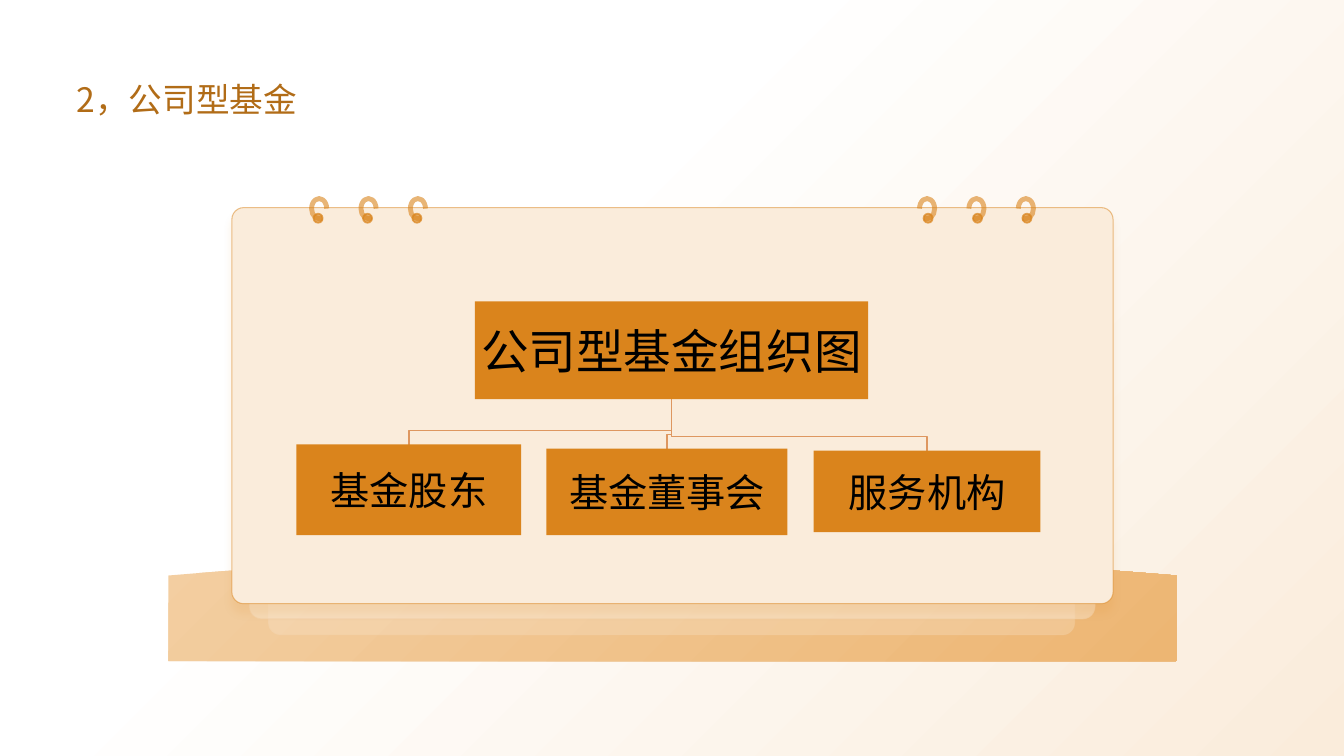
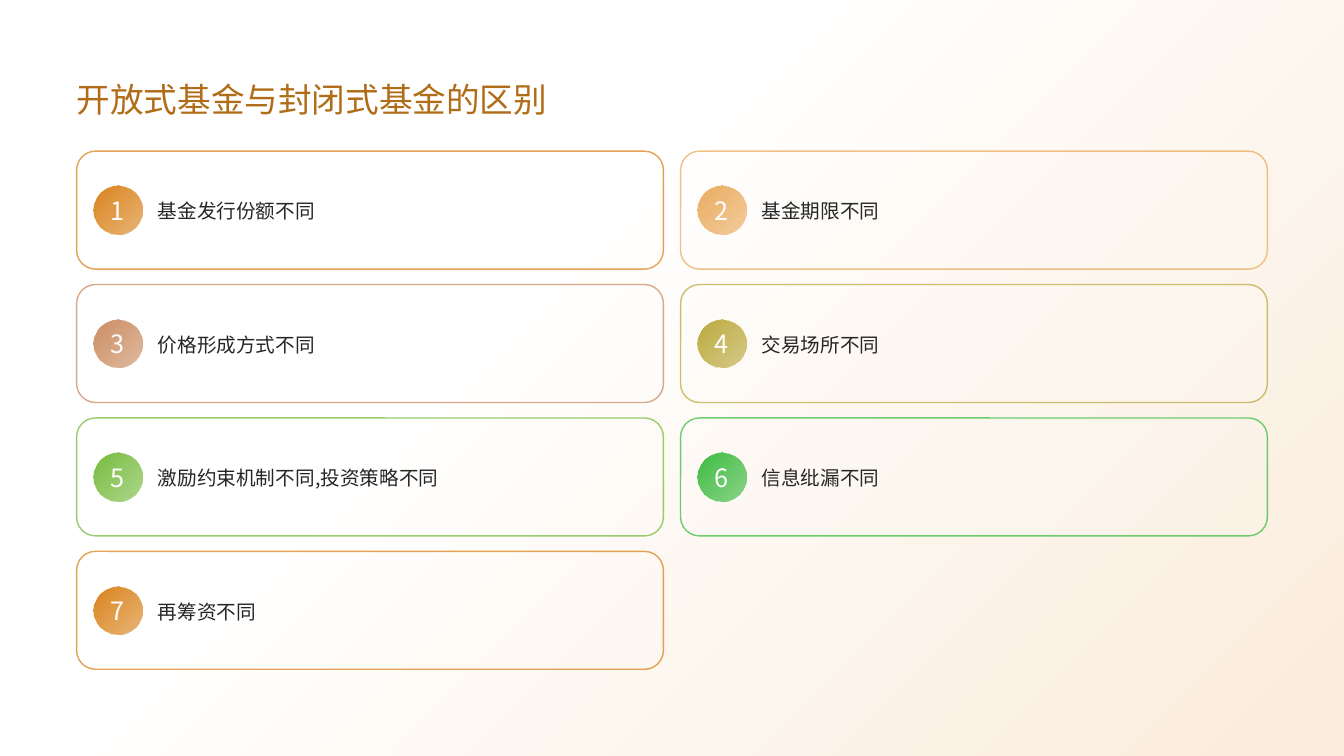
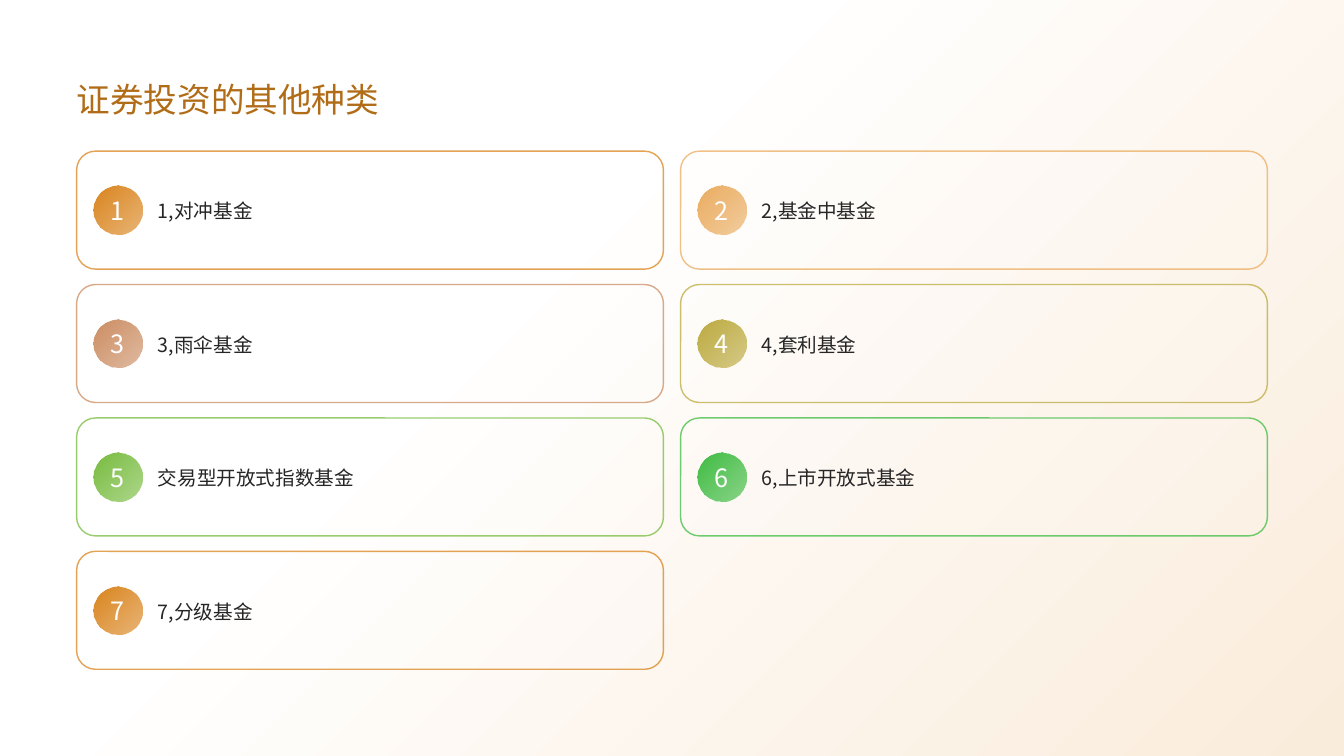
from lxml import etree
from pptx import Presentation
from pptx.dml.color import RGBColor
from pptx.enum.shapes import MSO_SHAPE
from pptx.enum.text import MSO_ANCHOR, PP_ALIGN
from pptx.oxml.ns import qn
from pptx.util import Inches, Pt

RECTANGLE = MSO_SHAPE.RECTANGLE
ROUNDED = MSO_SHAPE.ROUNDED_RECTANGLE
OVAL = MSO_SHAPE.OVAL
ARC = MSO_SHAPE.ARC
MIDDLE = MSO_ANCHOR.MIDDLE
BOTTOM = MSO_ANCHOR.BOTTOM
LEFT = PP_ALIGN.LEFT
CENTER = PP_ALIGN.CENTER

WHITE = RGBColor(0xFF, 0xFF, 0xFF)
BLACK = RGBColor(0x00, 0x00, 0x00)
INK = RGBColor(0x26, 0x26, 0x26)
BROWN = RGBColor(0xB1, 0x6C, 0x17)
ORANGE = RGBColor(0xDA, 0x84, 0x1C)
AMBER = RGBColor(0xEB, 0xAC, 0x5F)
CLAY = RGBColor(0xCC, 0x8D, 0x62)
OLIVE = RGBColor(0xBC, 0xAA, 0x3E)
LIME = RGBColor(0x77, 0xBC, 0x3E)
GREEN = RGBColor(0x3E, 0xBC, 0x41)
CREAM = RGBColor(0xFA, 0xEC, 0xDB)
PAGE = RGBColor(0xF9, 0xE7, 0xD0)
SAND = RGBColor(0xF3, 0xCE, 0xA1)
HONEY = RGBColor(0xED, 0xB6, 0x73)
BRANCH = RGBColor(0xDE, 0x97, 0x60)

FONT = "Noto Sans CJK SC"
SLIDE_WIDTH, SLIDE_HEIGHT = 13.33, 7.5
TITLE_BOX = (0.76, 0.39, 11.81, 0.79)
CARD_AREA = (0.76, 1.5, 11.81, 5.14)
CARD_WIDTH, CARD_HEIGHT = 5.82, 1.17
BADGE_SIZE = 0.48
CARD_COLORS = (ORANGE, AMBER, CLAY, OLIVE, LIME, GREEN)
BOARD_BOX = (2.3, 2.06, 8.74, 3.93)
STAND_BOX = (1.67, 5.5, 10, 1.06)

DIFFERENCES = ("基金发行份额不同", "基金期限不同", "价格形成方式不同", "交易场所不同",
               "激励约束机制不同,投资策略不同", "信息纰漏不同", "再筹资不同")
OTHER_KINDS = ("1,对冲基金", "2,基金中基金", "3,雨伞基金", "4,套利基金",
               "交易型开放式指数基金", "6,上市开放式基金", "7,分级基金")


def set_alpha(color_parent, percent):
    color = next(color_parent.iter(qn("a:srgbClr")))
    etree.SubElement(color, qn("a:alpha")).set("val", str(percent * 1000))


def fill_gradient(fill, first, last, start=0):
    fill.gradient()
    fill.gradient_angle = 315
    for stop, color, position in zip(fill.gradient_stops, (first, last), (start, 1)):
        stop.color.rgb = color
        stop.position = position


def paint(shape, fill=None, fill_alpha=100, line=None, width=1, line_alpha=100):
    shape.shadow.inherit = False
    properties = shape.element.spPr
    if fill is None:
        shape.fill.background()
    else:
        shape.fill.solid()
        shape.fill.fore_color.rgb = fill
        if fill_alpha < 100:
            set_alpha(properties.find(qn("a:solidFill")), fill_alpha)
    if line is None:
        shape.line.fill.background()
    else:
        shape.line.color.rgb = line
        shape.line.width = Pt(width)
        if line_alpha < 100:
            set_alpha(properties.find(qn("a:ln")), line_alpha)


def add_shape(slide, kind, box, adjustments=(), **style):
    shape = slide.shapes.add_shape(kind, *map(Inches, box))
    for index, value in enumerate(adjustments):
        shape.adjustments[index] = value
    paint(shape, **style)
    return shape


def add_path(slide, points, close=False):
    start, *others = [(Inches(x), Inches(y)) for x, y in points]
    builder = slide.shapes.build_freeform(*start, scale=1.0)
    builder.add_line_segments(others, close=close)
    return builder.convert_to_shape()


def write(shape, text, size, color, align=LEFT, anchor=MIDDLE,
          insets=(0, 0, 0, 0), wrap=True, spacing=None):
    frame = shape.text_frame
    frame.word_wrap = wrap
    frame.vertical_anchor = anchor
    (frame.margin_left, frame.margin_top,
     frame.margin_right, frame.margin_bottom) = map(Inches, insets)
    frame.text = text
    paragraph = frame.paragraphs[0]
    paragraph.alignment = align
    if spacing:
        paragraph.line_spacing = spacing
    font = paragraph.runs[0].font
    font.name = FONT
    font.size = Pt(size)
    font.color.rgb = color
    properties = paragraph.runs[0].font.fill and paragraph.runs[0]._r.get_or_add_rPr()
    etree.SubElement(properties, qn("a:ea")).set("typeface", FONT)


def add_titled_slide(presentation, title):
    slide = presentation.slides.add_slide(presentation.slide_layouts[6])
    title_box = slide.shapes.add_textbox(*map(Inches, TITLE_BOX))
    write(title_box, title, 24, BROWN, anchor=BOTTOM)
    return slide


def draw_stand(slide, box):
    left, top, width, height = box
    rise, steps = 0.21, 40
    arch = [(left + width * step / steps, top + rise * (2 * step / steps - 1) ** 2)
            for step in range(steps + 1)]
    corners = [(left + width, top + height), (left, top + height)]
    stand = add_path(slide, arch + corners, close=True)
    paint(stand)
    fill_gradient(stand.fill, SAND, HONEY)


def draw_ring(slide, left, top, center, mirrored):
    hole_size, wire_width = 0.09, 0.15
    hole_left, wire_left = left + 0.02, left
    if mirrored:
        hole_left = 2 * center - hole_left - hole_size
        wire_left = 2 * center - wire_left - wire_width
    add_shape(slide, OVAL, (hole_left, top + 0.15, hole_size, hole_size),
              fill=ORANGE, fill_alpha=60, line=ORANGE, width=1.25, line_alpha=70)
    wire = add_shape(slide, ARC, (wire_left, top, wire_width, 0.2), (42.72, 0),
                     line=ORANGE, width=3.5, line_alpha=60)
    if mirrored:
        wire.element.spPr.find(qn("a:xfrm")).set("flipH", "1")


def draw_board(slide, box):
    left, top, width, height = box
    corner = (0.03,)
    add_shape(slide, ROUNDED, (left + 0.36, top + 0.17, width - 0.74, height + 0.14), corner,
              fill=PAGE, fill_alpha=30, line=SAND, width=0.75, line_alpha=25)
    add_shape(slide, ROUNDED, (left + 0.17, top + 0.01, width - 0.35, height + 0.14), corner,
              fill=PAGE, fill_alpha=50, line=SAND, width=0.75, line_alpha=61)
    board = add_shape(slide, ROUNDED, box, corner,
                      fill=CREAM, line=ORANGE, width=0.75, line_alpha=50)
    effects = board.element.spPr.find(qn("a:effectLst"))
    shadow = etree.SubElement(effects, qn("a:outerShdw"), blurRad=str(Pt(6)),
                              dist=str(Pt(6)), dir="5400000", rotWithShape="0")
    etree.SubElement(shadow, qn("a:srgbClr"), val=str(ORANGE))
    set_alpha(shadow, 10)
    for mirrored in (False, True):
        for index in range(3):
            draw_ring(slide, left + 0.79 + 0.49 * index, top - 0.09,
                      left + width / 2, mirrored)


def draw_organization(slide, board):
    left, top = board[:2]
    root = (left + 2.41, top + 0.93, 3.9, 0.97)
    children = (
        ("基金股东", (left + 0.64, top + 2.35, 2.23, 0.9)),
        ("基金董事会", (left + 3.12, top + 2.39, 2.39, 0.86)),
        ("服务机构", (left + 5.77, top + 2.41, 2.25, 0.81)),
    )
    root_center, root_bottom = root[0] + root[2] / 2, root[1] + root[3]
    for _, (child_left, child_top, child_width, _) in children:
        child_center, bend = child_left + child_width / 2, child_top - 0.14
        branch = add_path(slide, [(root_center, root_bottom), (root_center, bend),
                                  (child_center, bend), (child_center, child_top)])
        paint(branch, line=BRANCH)
    for text, box, size in [("公司型基金组织图", root, 34),
                            *((text, box, 28) for text, box in children)]:
        node = add_shape(slide, RECTANGLE, box, fill=ORANGE)
        write(node, text, size, BLACK, align=CENTER, insets=(0.02,) * 4)


def draw_card(slide, box, number, text, color):
    left, top, _, height = box
    card = add_shape(slide, ROUNDED, box, (0.16,), fill=WHITE, fill_alpha=10,
                     line=color, line_alpha=75)
    write(card, text, 14, INK, insets=(0.75, 0, 0.12, 0.05), spacing=1.3)
    badge = add_shape(slide, OVAL, (left + 0.17, top + (height - BADGE_SIZE) / 2,
                                    BADGE_SIZE, BADGE_SIZE))
    fill_gradient(badge.fill, color, color)
    set_alpha(list(badge.element.iter(qn("a:gs")))[-1], 59)
    write(badge, str(number), 18, WHITE, align=CENTER, wrap=False,
          insets=(0.1, 0.05, 0.1, 0.05))


def draw_cards(slide, area, texts):
    left, top, width, height = area
    columns = 2
    rows = -(-len(texts) // columns)
    column_pitch = (width - CARD_WIDTH) / (columns - 1)
    row_pitch = (height - CARD_HEIGHT) / (rows - 1)
    for index, text in enumerate(texts):
        row, column = divmod(index, columns)
        box = (left + column * column_pitch, top + row * row_pitch, CARD_WIDTH, CARD_HEIGHT)
        draw_card(slide, box, index + 1, text, CARD_COLORS[index % len(CARD_COLORS)])


def build_organization_slide(presentation):
    slide = add_titled_slide(presentation, "2，公司型基金")
    draw_stand(slide, STAND_BOX)
    draw_board(slide, BOARD_BOX)
    draw_organization(slide, BOARD_BOX)


def build_card_slide(presentation, title, texts):
    slide = add_titled_slide(presentation, title)
    draw_cards(slide, CARD_AREA, texts)


def main():
    presentation = Presentation()
    presentation.slide_width = Inches(SLIDE_WIDTH)
    presentation.slide_height = Inches(SLIDE_HEIGHT)
    fill_gradient(presentation.slide_master.background.fill, WHITE, CREAM, start=0.37)
    build_organization_slide(presentation)
    build_card_slide(presentation, "开放式基金与封闭式基金的区别", DIFFERENCES)
    build_card_slide(presentation, "证券投资的其他种类", OTHER_KINDS)
    presentation.save("out.pptx")


if __name__ == "__main__":
    main()
